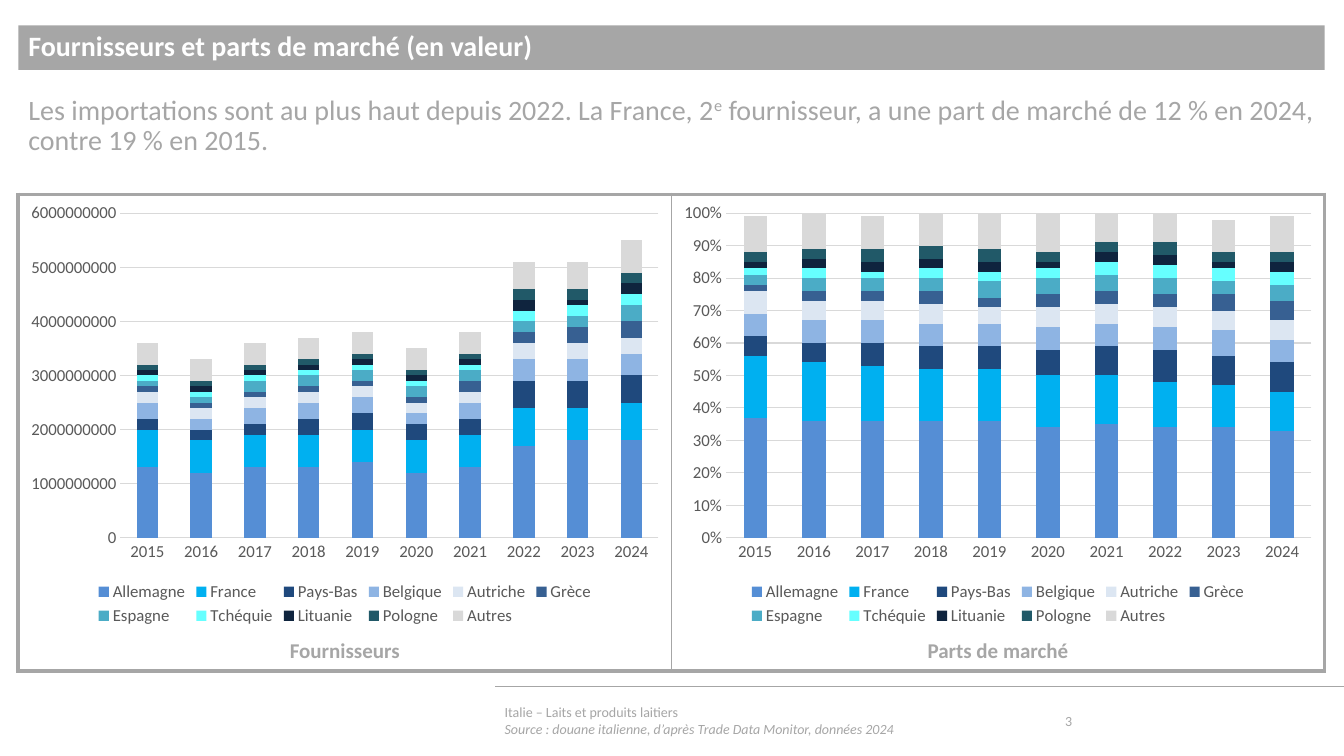
import pptx
import pptx.chart.data
import pptx.dml.color
import pptx.enum.chart
import pptx.enum.shapes
import pptx.enum.text
import pptx.oxml
import pptx.oxml.ns
import pptx.util

Cm, Pt = pptx.util.Cm, pptx.util.Pt
ALIGN = pptx.enum.text.PP_ALIGN
ANCHOR = pptx.enum.text.MSO_ANCHOR

GREY, WHITE, AXIS_TEXT, RULE = "A6A6A6", "FFFFFF", "595959", "D9D9D9"

TITLE = "Fournisseurs et parts de marché (en valeur)"
MESSAGE = [
    ("Les importations sont au plus haut depuis 2022. La France, 2", {}),
    ("e", {"superscript": True}),
    (" fournisseur, a une part de marché de 12 % en 2024, contre 19 % en 2015.", {}),
]
FOOTER = [
    [("Italie – Laits et produits laitiers", {})],
    [("Source : douane italienne, d’après Trade Data Monitor, données 2024", {"italic": True})],
]
PAGE = "3"

YEARS = [str(year) for year in range(2015, 2025)]
# Supplier, colour, imports in hundreds of millions, market share in percent
SUPPLIERS = [
    ("Allemagne", "558ED5", (13, 12, 13, 13, 14, 12, 13, 17, 18, 18),
     (37, 36, 36, 36, 36, 34, 35, 34, 34, 33)),
    ("France", "00B0F0", (7, 6, 6, 6, 6, 6, 6, 7, 6, 7),
     (19, 18, 17, 16, 16, 16, 15, 14, 13, 12)),
    ("Pays-Bas", "1F497D", (2, 2, 2, 3, 3, 3, 3, 5, 5, 5),
     (6, 6, 7, 7, 7, 8, 9, 10, 9, 9)),
    ("Belgique", "8EB4E3", (3, 2, 3, 3, 3, 2, 3, 4, 4, 4),
     (7, 7, 7, 7, 7, 7, 7, 7, 8, 7)),
    ("Autriche", "DCE6F2", (2, 2, 2, 2, 2, 2, 2, 3, 3, 3),
     (7, 6, 6, 6, 5, 6, 6, 6, 6, 6)),
    ("Grèce", "376092", (1, 1, 1, 1, 1, 1, 2, 2, 3, 3),
     (2, 3, 3, 4, 3, 4, 4, 4, 5, 6)),
    ("Espagne", "4BACC6", (1, 1, 2, 2, 2, 2, 2, 2, 2, 3),
     (3, 4, 4, 4, 5, 5, 5, 5, 4, 5)),
    ("Tchéquie", "66FFFF", (1, 1, 1, 1, 1, 1, 1, 2, 2, 2),
     (2, 3, 2, 3, 3, 3, 4, 4, 4, 4)),
    ("Lituanie", "0F243E", (1, 1, 1, 1, 1, 1, 1, 2, 1, 2),
     (2, 3, 3, 3, 3, 2, 3, 3, 2, 3)),
    ("Pologne", "215968", (1, 1, 1, 1, 1, 1, 1, 2, 2, 2),
     (3, 3, 4, 4, 4, 3, 3, 4, 3, 3)),
    ("Autres", "D9D9D9", (4, 4, 4, 4, 4, 4, 4, 5, 5, 6),
     (11, 11, 10, 11, 12, 12, 10, 10, 10, 11)),
]
IMPORTS = [[value * 10 ** 8 for value in row[2]] for row in SUPPLIERS]
SHARES = [[value / 100 for value in row[3]] for row in SUPPLIERS]
# Caption, values, axis maximum, axis step, number format
PANELS = [
    ("Fournisseurs", IMPORTS, 6 * 10 ** 9, 10 ** 9, "General"),
    ("Parts de marché", SHARES, 1, 0.1, "0%"),
]

LEFT, WIDTH = 0.46, 32.92
PANEL_WIDTH = WIDTH / 2
PANEL_TOP, PANEL_HEIGHT, CHART_HEIGHT = 4.9, 12.01, 10.97
CAPTION_TOP = 15.93
FOOTER_LEFT, FOOTER_TOP, FOOTER_HEIGHT = 12.47, 17.65, 1.02


def color(value):
    return pptx.dml.color.RGBColor.from_string(value)


def style_font(font, size, font_color, bold=False):
    font.name, font.size, font.bold = "Calibri", Pt(size), bold
    font.color.rgb = color(font_color)


def place(shape, left, top, width, height):
    shape.left, shape.top, shape.width, shape.height = map(Cm, (left, top, width, height))


def write(shape, lines, size, text_color, bold=False, align=ALIGN.LEFT,
          anchor=ANCHOR.TOP, spacing=None):
    """Fill a shape with paragraphs, each a list of (text, options) runs."""
    frame = shape.text_frame
    frame.word_wrap = True
    frame.auto_size = pptx.enum.text.MSO_AUTO_SIZE.NONE
    frame.vertical_anchor = anchor
    for index, runs in enumerate(lines):
        paragraph = frame.add_paragraph() if index else frame.paragraphs[0]
        paragraph.alignment = align
        paragraph.space_before = Pt(0)
        paragraph.line_spacing = spacing
        for text, options in runs:
            run = paragraph.add_run()
            run.text = text
            style_font(run.font, size, text_color, bold)
            run.font.italic = options.get("italic", False)
            if options.get("superscript"):
                run.font._element.set("baseline", "30000")


def add_text(slide, box, lines, size, **options):
    write(slide.shapes.add_textbox(*map(Cm, box)), lines, size, GREY, **options)


def border_cell(cell, widths):
    """Draw the borders of a cell, given as widths in points by side."""
    properties = cell._tc.get_or_add_tcPr()
    for side in "LRTB":
        properties.append(pptx.oxml.parse_xml(
            f'<a:ln{side} {pptx.oxml.ns.nsdecls("a")} w="{Pt(widths[side])}">'
            f'<a:solidFill><a:srgbClr val="{GREY}"/></a:solidFill></a:ln{side}>'))
    cell.fill.background()


def add_frame(slide):
    box = map(Cm, (LEFT, PANEL_TOP, WIDTH, PANEL_HEIGHT))
    table = slide.shapes.add_table(1, 2, *box).table
    table.first_row = table.horz_banding = False
    border_cell(table.cell(0, 0), {"L": 3, "R": 1, "T": 3, "B": 3})
    border_cell(table.cell(0, 1), {"L": 1, "R": 3, "T": 3, "B": 3})


def add_supplier_chart(slide, left, values, maximum, step, number_format):
    data = pptx.chart.data.CategoryChartData(number_format=number_format)
    data.categories = YEARS
    for supplier, row in zip(SUPPLIERS, values):
        data.add_series(supplier[0], row)
    box = map(Cm, (left, PANEL_TOP, PANEL_WIDTH, CHART_HEIGHT))
    kind = pptx.enum.chart.XL_CHART_TYPE.COLUMN_STACKED
    chart = slide.shapes.add_chart(kind, *box, data).chart
    chart.has_title = False
    style_font(chart.font, 12, AXIS_TEXT)

    chart.has_legend = True
    chart.legend.position = pptx.enum.chart.XL_LEGEND_POSITION.BOTTOM
    chart.legend.include_in_layout = False
    style_font(chart.legend.font, 12, AXIS_TEXT)

    years, amounts = chart.category_axis, chart.value_axis
    for axis in (years, amounts):
        axis.major_tick_mark = axis.minor_tick_mark = pptx.enum.chart.XL_TICK_MARK.NONE
        style_font(axis.tick_labels.font, 12, AXIS_TEXT)
    amounts.minimum_scale, amounts.maximum_scale, amounts.major_unit = 0, maximum, step
    amounts.tick_labels.number_format = number_format
    amounts.tick_labels.number_format_is_linked = False
    amounts.format.line.fill.background()
    for line in (years.format.line, amounts.major_gridlines.format.line):
        line.color.rgb = color(RULE)
        line.width = Pt(0.75)

    plot = chart.plots[0]
    plot.gap_width, plot.overlap = 150, 100
    plot.vary_by_categories = False
    for series, supplier in zip(plot.series, SUPPLIERS):
        series.format.fill.solid()
        series.format.fill.fore_color.rgb = color(supplier[1])


def add_footer(slide, right):
    line = slide.shapes.add_connector(
        pptx.enum.shapes.MSO_CONNECTOR.STRAIGHT,
        right, Cm(17.3), Cm(FOOTER_LEFT), Cm(17.3))
    line.line.color.rgb = color(GREY)
    line.line.width = Pt(0.5)
    line._element.spPr.append(pptx.oxml.parse_xml(
        f'<a:effectLst {pptx.oxml.ns.nsdecls("a")}/>'))
    add_text(slide, (FOOTER_LEFT, FOOTER_TOP, 13.79, FOOTER_HEIGHT), FOOTER, 10,
             anchor=ANCHOR.MIDDLE)
    add_text(slide, (26.59, FOOTER_TOP, 2.51, FOOTER_HEIGHT), [[(PAGE, {})]], 10,
             anchor=ANCHOR.MIDDLE)


def main():
    presentation = pptx.Presentation()
    presentation.slide_width, presentation.slide_height = Cm(33.87), Cm(19.05)
    slide = presentation.slides.add_slide(presentation.slide_layouts[1])

    title, message = slide.placeholders
    place(title, LEFT, 0.64, WIDTH, 1.12)
    title.fill.solid()
    title.fill.fore_color.rgb = color(GREY)
    write(title, [[(TITLE, {})]], 20, WHITE, bold=True, anchor=ANCHOR.MIDDLE, spacing=0.9)

    place(message, LEFT, 2.29, WIDTH, 2.06)
    properties = message.text_frame.paragraphs[0]._p.get_or_add_pPr()
    properties.set("marL", "0")
    properties.set("indent", "0")
    properties.append(pptx.oxml.parse_xml(f'<a:buNone {pptx.oxml.ns.nsdecls("a")}/>'))
    write(message, [MESSAGE], 20, GREY, spacing=0.9)

    add_frame(slide)
    for index, (caption, *chart_settings) in enumerate(PANELS):
        left = LEFT + index * PANEL_WIDTH
        add_text(slide, (left, CAPTION_TOP, PANEL_WIDTH, 0.89), [[(caption, {})]], 15,
                 bold=True, align=ALIGN.CENTER)
        add_supplier_chart(slide, left, *chart_settings)
    add_footer(slide, presentation.slide_width)

    presentation.save("out.pptx")


if __name__ == "__main__":
    main()
